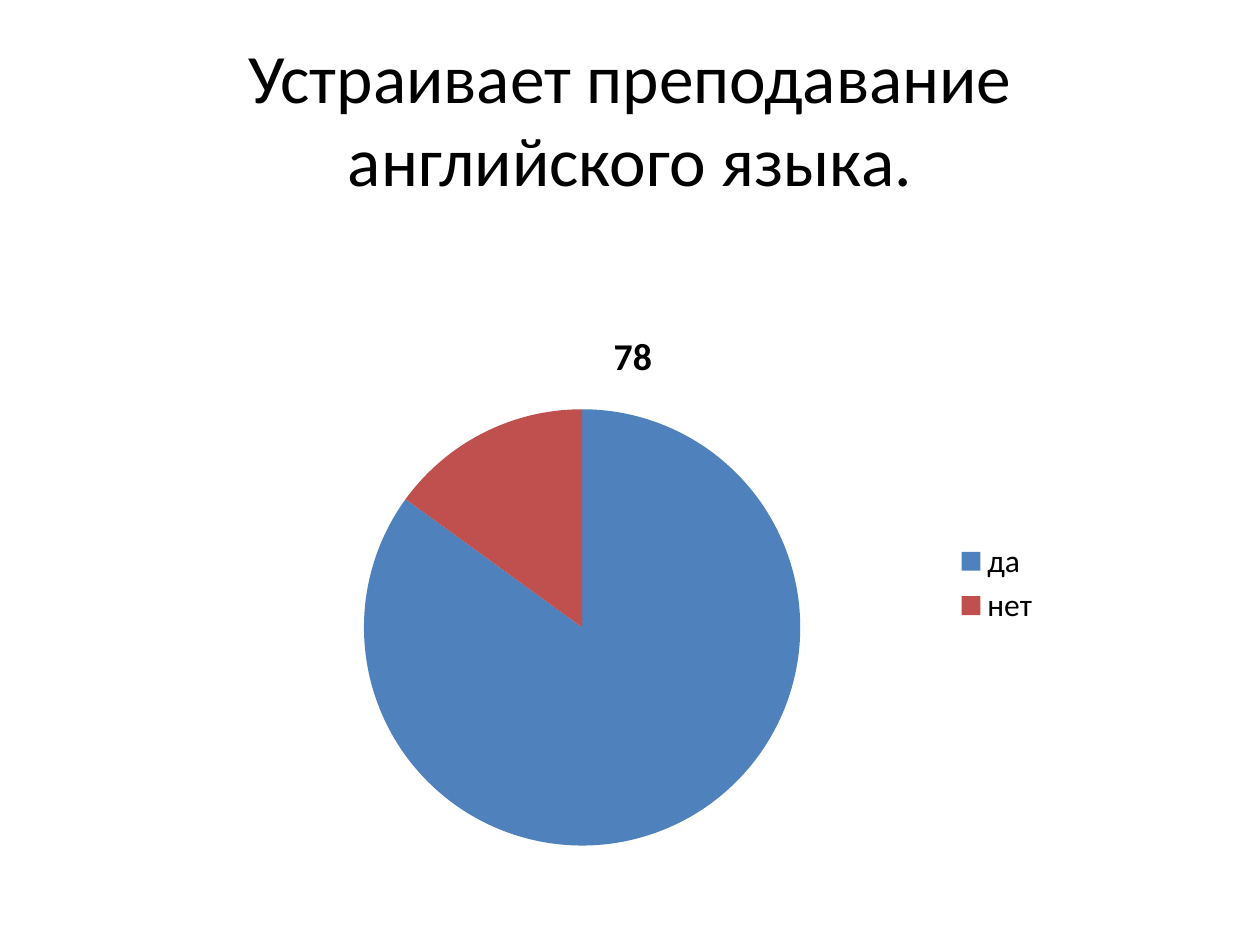
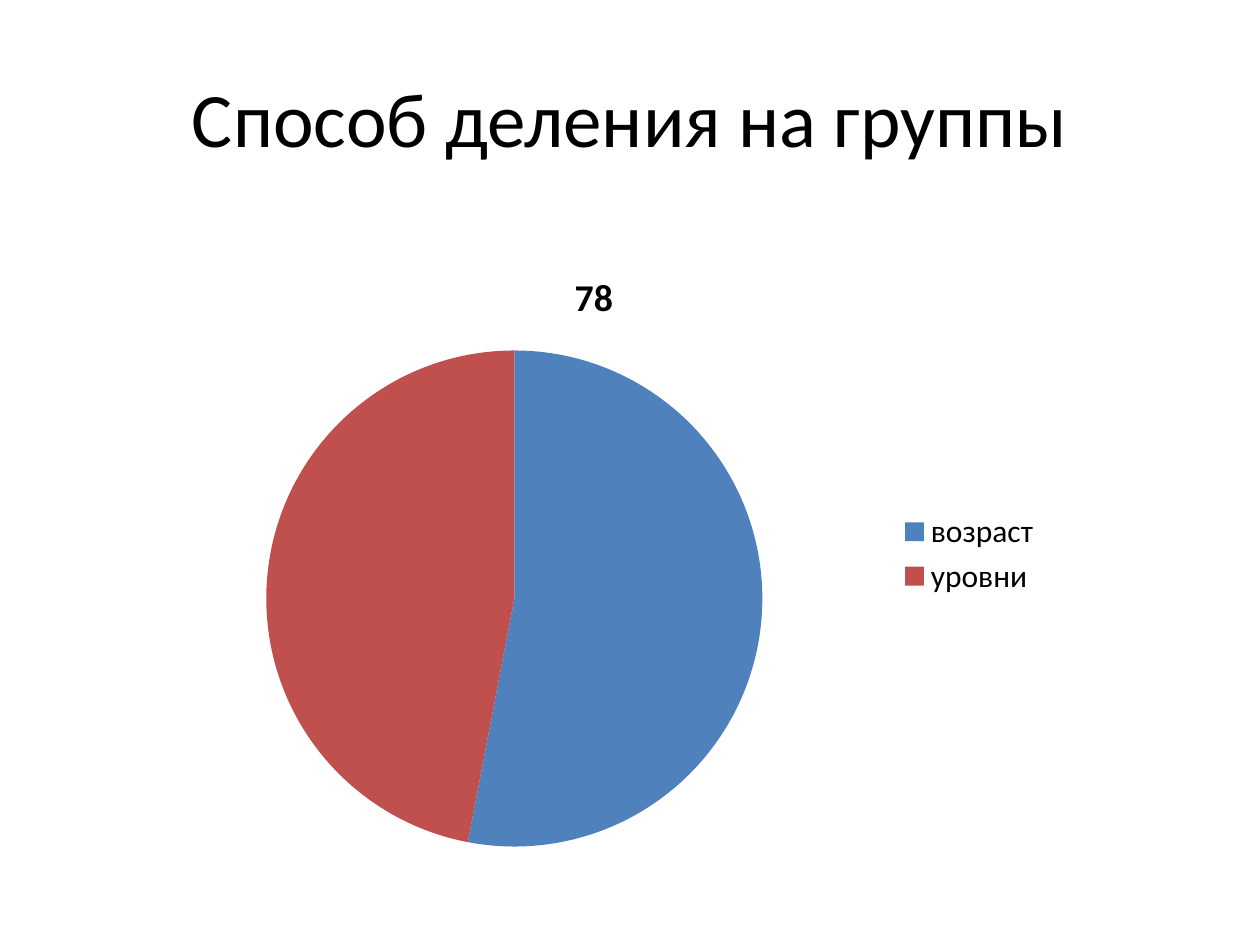
"""Builds two survey slides, each with a title and a pie chart."""
import dataclasses

import pptx
import pptx.chart.data
import pptx.dml.color
import pptx.enum.chart
import pptx.enum.text
import pptx.presentation
import pptx.slide
import pptx.util

PX_PER_INCH = 126
FONT = "Calibri"
BLACK = pptx.dml.color.RGBColor(0x00, 0x00, 0x00)
BLUE = pptx.dml.color.RGBColor(0x4F, 0x81, 0xBD)
RED = pptx.dml.color.RGBColor(0xC0, 0x50, 0x4D)
SLICE_COLORS = (BLUE, RED)
SERIES_NAME = "78"


@dataclasses.dataclass(frozen=True)
class Box:
    left: int
    top: int
    width: int
    height: int

    def emu(self) -> tuple[pptx.util.Emu, ...]:
        return tuple(px(n) for n in (self.left, self.top, self.width, self.height))


@dataclasses.dataclass(frozen=True)
class Question:
    title: str
    title_size: float
    chart_box: Box
    answers: dict[str, int]


TITLE_BOX = Box(63, 38, 1134, 158)
QUESTIONS = (
    Question("Устраивает преподавание английского языка.", 39.6,
             Box(213, 304, 840, 559), {"да": 85, "нет": 15}),
    Question("Способ деления на группы", 44,
             Box(134, 244, 920, 620), {"возраст": 53, "уровни": 47}),
)


def px(n: int) -> pptx.util.Emu:
    return pptx.util.Emu(round(n * 914400 / PX_PER_INCH))


def set_font(font, size: float, bold: bool = False) -> None:
    font.name = FONT
    font.size = pptx.util.Pt(size)
    font.bold = bold
    font.color.rgb = BLACK


def add_title(s: pptx.slide.Slide, text: str, size: float) -> None:
    tf = s.shapes.add_textbox(*TITLE_BOX.emu()).text_frame
    tf.word_wrap = True
    tf.vertical_anchor = pptx.enum.text.MSO_ANCHOR.MIDDLE
    p = tf.paragraphs[0]
    p.text = text
    p.alignment = pptx.enum.text.PP_ALIGN.CENTER
    set_font(p.font, size)


def add_pie(s: pptx.slide.Slide, box: Box, answers: dict[str, int]) -> None:
    data = pptx.chart.data.CategoryChartData()
    data.categories = list(answers)
    data.add_series(SERIES_NAME, list(answers.values()))
    chart = s.shapes.add_chart(
        pptx.enum.chart.XL_CHART_TYPE.PIE, *box.emu(), data).chart
    set_font(chart.font, 18)

    chart.has_title = True
    p = chart.chart_title.text_frame.paragraphs[0]
    p.text = SERIES_NAME
    set_font(p.font, 21.6, bold=True)
    chart.chart_title.include_in_layout = False

    chart.has_legend = True
    chart.legend.position = pptx.enum.chart.XL_LEGEND_POSITION.RIGHT
    chart.legend.include_in_layout = False

    plot = chart.plots[0]
    plot.vary_by_categories = True
    for i, color in enumerate(SLICE_COLORS):
        fill = plot.series[0].points[i].format.fill
        fill.solid()
        fill.fore_color.rgb = color


def add_question(prs: pptx.presentation.Presentation, question: Question) -> None:
    s = prs.slides.add_slide(prs.slide_layouts[6])
    add_title(s, question.title, question.title_size)
    add_pie(s, question.chart_box, question.answers)


def main() -> None:
    prs = pptx.Presentation()
    prs.slide_width = px(1260)
    prs.slide_height = px(945)
    for question in QUESTIONS:
        add_question(prs, question)
    prs.save("out.pptx")


if __name__ == "__main__":
    main()
